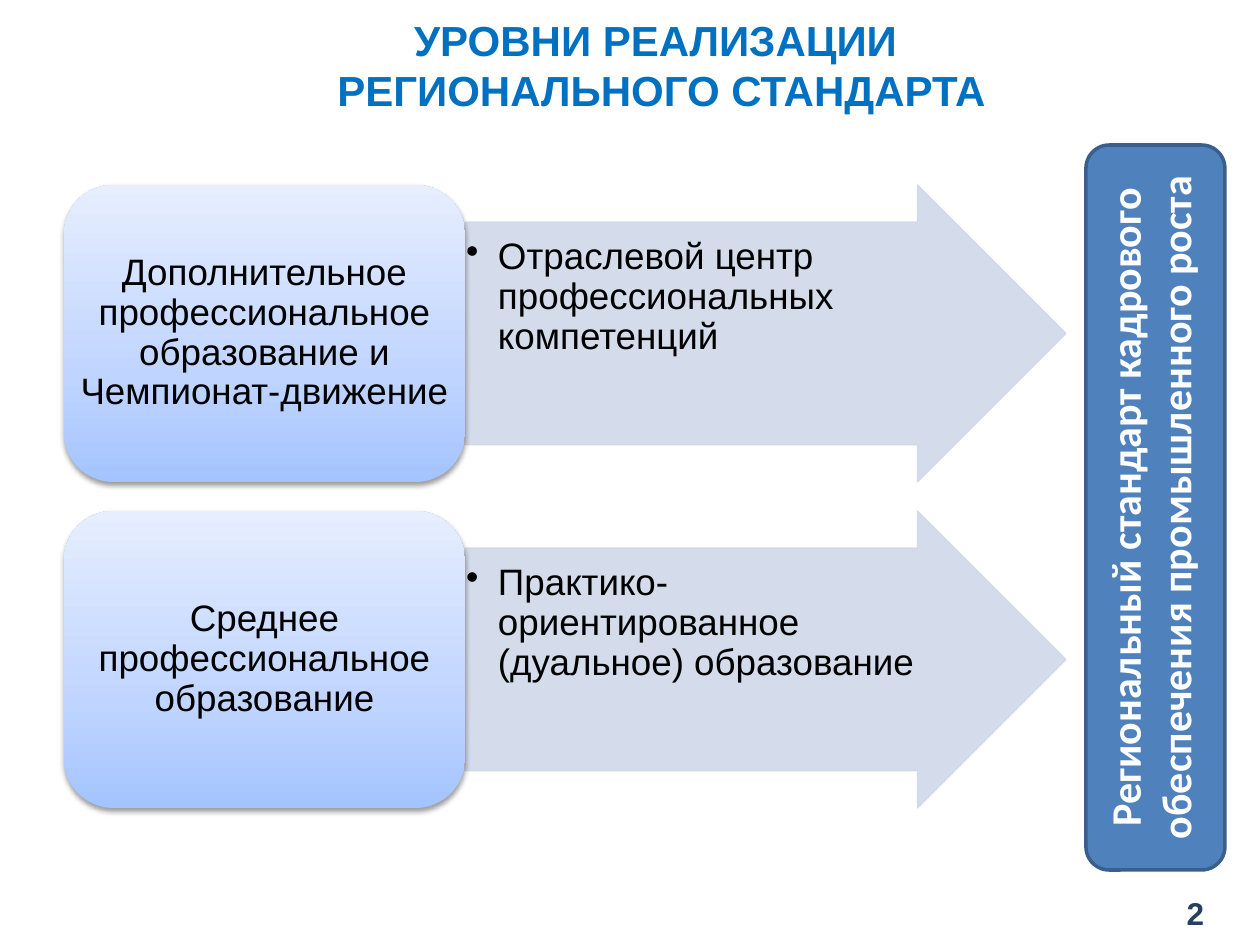
from dataclasses import dataclass

from lxml.etree import SubElement
from pptx import Presentation
from pptx.dml.color import RGBColor
from pptx.enum.shapes import MSO_SHAPE as Shape
from pptx.enum.text import MSO_ANCHOR as Anchor, PP_ALIGN as Align
from pptx.oxml.ns import qn
from pptx.util import Pt

PX = 914400 / 126


@dataclass(frozen=True)
class Theme:
    """Colours, fonts and type sizes of the slide."""
    title: str = "0070C0"
    body: str = "000000"
    arrow: str = "D0D8E8"
    bar: str = "4F81BD"
    bar_edge: str = "3A5F8C"
    bar_text: str = "FFFFFF"
    number: str = "254061"
    card_stops: tuple = ((0, "A4C4FF"), (35, "BFD4FF"), (100, "E6EEFF"))
    font: str = "Arial"
    bar_font: str = "Calibri"
    heading_size: int = 24
    body_size: int = 21
    number_size: int = 18


THEME = Theme()


def emu(*lengths):
    """Turn px lengths into EMU."""
    return [round(length * PX) for length in lengths]


def add_color(parent, color, **effects):
    """Append an RGB colour with effects such as alpha, in percent."""
    node = SubElement(parent, qn("a:srgbClr"), val=color)
    for name, percent in effects.items():
        SubElement(node, qn(f"a:{name}"), val=str(percent * 1000))


def add_bullet(para, indent):
    """Give a paragraph a round bullet with a hanging indent in px."""
    props = para._p.get_or_add_pPr()
    width = emu(indent)[0]
    props.set("marL", str(width))
    props.set("indent", str(-width))
    SubElement(props, qn("a:buChar"), char="•")


def write(box, text, color=THEME.body, size=THEME.body_size, font=THEME.font,
          bold=False, align=Align.CENTER, anchor=Anchor.MIDDLE,
          margins=(13, 6, 13, 6), spacing=None, bullet=0):
    """Write one formatted paragraph into a box; newlines become line breaks."""
    frame = box.text_frame
    frame.word_wrap = True
    frame.vertical_anchor = anchor
    (frame.margin_left, frame.margin_top,
     frame.margin_right, frame.margin_bottom) = emu(*margins)
    para = frame.paragraphs[0]
    para.alignment = align
    if spacing:
        para.line_spacing = spacing
    if bullet:
        add_bullet(para, bullet)
    for index, line in enumerate(text.split("\n")):
        if index:
            para.add_line_break()
        span = para.add_run()
        span.text = line
        span.font.name = font
        span.font.size = Pt(size)
        span.font.bold = bold
        span.font.color.rgb = RGBColor.from_string(color)


def add_text(page, box, text, **style):
    """Add a text box and write into it."""
    label = page.shapes.add_textbox(*emu(*box))
    write(label, text, **style)
    return label


def add_solid(page, kind, box, fill, edge, edge_width):
    """Add a flat outlined preset shape."""
    shape = page.shapes.add_shape(kind, *emu(*box))
    shape.shadow.inherit = False
    shape.fill.solid()
    shape.fill.fore_color.rgb = RGBColor.from_string(fill)
    shape.line.color.rgb = RGBColor.from_string(edge)
    shape.line.width = Pt(edge_width)
    return shape


def add_arrow(page, box, text):
    """Add a translucent arrow holding one bulleted item."""
    arrow = add_solid(page, Shape.RIGHT_ARROW, box, THEME.arrow, THEME.arrow, 0.75)
    arrow.adjustments[0] = 0.75
    arrow.adjustments[1] = 0.5
    for color in arrow._element.spPr.iter(qn("a:srgbClr")):
        SubElement(color, qn("a:alpha"), val="90000")
    write(arrow, text, align=Align.LEFT, anchor=Anchor.TOP,
          margins=(1, 16, 1, 1), spacing=0.9, bullet=32)


def add_card(page, box, text):
    """Add a rounded gradient card with a soft shadow."""
    card = page.shapes.add_shape(Shape.ROUNDED_RECTANGLE, *emu(*box))
    card.line.fill.background()
    card.fill.gradient()
    card.fill.gradient_angle = 90
    props = card._element.spPr
    stops = props.find(".//" + qn("a:gsLst"))
    for stop in list(stops):
        stops.remove(stop)
    for position, color in THEME.card_stops:
        add_color(SubElement(stops, qn("a:gs"), pos=str(position * 1000)), color)
    card.shadow.inherit = False
    shadow = SubElement(props.find(qn("a:effectLst")), qn("a:outerShdw"),
                        blurRad=str(Pt(3.1)), dist=str(Pt(1.6)),
                        dir="5400000", rotWithShape="0")
    add_color(shadow, "000000", alpha=38)
    write(card, text, margins=(0, 5, 0, 5), spacing=0.9)


def add_level(page, box, name, item):
    """Add a card and the arrow that leads from it, filling the box."""
    left, top, width, height = box
    card_width = round(width * 0.4)
    add_arrow(page, (left + card_width, top, width - card_width, height), item)
    add_card(page, (left, top, card_width, height), name)


def add_standard_bar(page, box, text):
    """Add the upright bar with text that reads from bottom to top."""
    left, top, width, height = box
    add_solid(page, Shape.ROUNDED_RECTANGLE, box, THEME.bar, THEME.bar_edge, 2)
    label = add_text(page, (left, top + 10, width - 12, height - 20), text,
                     color=THEME.bar_text, size=THEME.heading_size,
                     font=THEME.bar_font, bold=True, anchor=Anchor.TOP)
    label.text_frame._txBody.bodyPr.set("vert", "vert270")


def main():
    """Build the slide and save it."""
    deck = Presentation()
    deck.slide_width, deck.slide_height = emu(1260, 945)
    page = deck.slides.add_slide(deck.slide_layouts[6])
    add_text(page, (63, 16, 1197, 97),
             "УРОВНИ РЕАЛИЗАЦИИ \nРЕГИОНАЛЬНОГО СТАНДАРТА",
             color=THEME.title, size=THEME.heading_size, bold=True)
    levels = (
        ("Дополнительное профессиональное образование и Чемпионат-движение",
         "Отраслевой центр профессиональных компетенций"),
        ("Среднее профессиональное образование",
         "Практико-ориентированное (дуальное) образование"),
    )
    for row, (name, item) in enumerate(levels):
        add_level(page, (64, 185 + row * 326, 1002, 297), name, item)
    add_standard_bar(page, (1086, 145, 139, 725),
                     "Региональный стандарт кадрового обеспечения промышленного роста")
    add_text(page, (1147, 885, 97, 55), "2", color=THEME.number,
             size=THEME.number_size, bold=True)
    deck.save("out.pptx")


if __name__ == "__main__":
    main()
